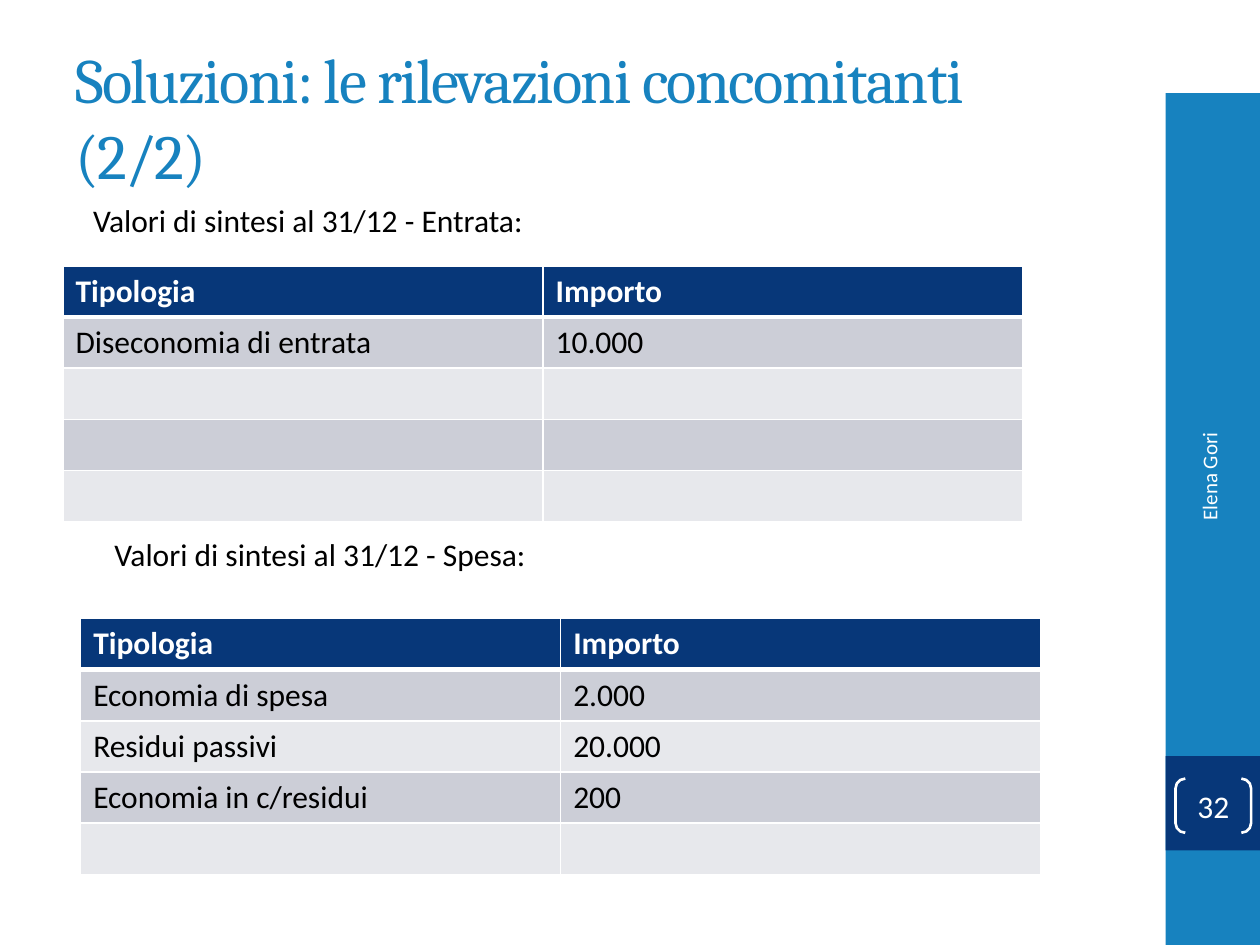
from lxml.etree import SubElement
from pptx import Presentation
from pptx.dml.color import RGBColor
from pptx.enum.shapes import MSO_SHAPE as Shape
from pptx.enum.text import MSO_ANCHOR as Anchor, PP_ALIGN as Align
from pptx.oxml.ns import qn
from pptx.util import Inches, Pt

# Content
TITLE = "Soluzioni: le rilevazioni concomitanti (2/2)"
AUTHOR = "Elena Gori"
PAGE = "32"
HEADER = ("Tipologia", "Importo")
BLANK_ROW = ("", "")
SECTIONS = [
    {
        "caption": "Valori di sintesi al 31/12 - Entrata:",
        "caption_at": (0.64, 1.55),
        "table_at": (0.5, 2.11),
        "rows": [HEADER, ("Diseconomia di entrata", "10.000")] + [BLANK_ROW] * 3,
    },
    {
        "caption": "Valori di sintesi al 31/12 - Spesa:",
        "caption_at": (0.81, 4.2),
        "table_at": (0.64, 4.91),
        "rows": [
            HEADER,
            ("Economia di spesa", "2.000"),
            ("Residui passivi", "20.000"),
            ("Economia in c/residui", "200"),
            BLANK_ROW,
        ],
    },
]

BLUE, NAVY, WHITE, BLACK = "1782BF", "073779", "FFFFFF", "000000"
BANDS = ("CCCED7", "E7E8EC")
COLUMN_WIDTH, TABLE_HEIGHT = 3.81, 2.03


def color(value):
    return RGBColor.from_string(value)


def write(frame, text, size=18, font="Calibri", ink=BLACK, bold=False,
          align=Align.LEFT, spacing=None):
    paragraph = frame.paragraphs[0]
    paragraph.alignment = align
    run = paragraph.add_run()
    run.text = text
    run.font.size = Pt(size)
    run.font.name = font
    run.font.bold = bold
    run.font.color.rgb = color(ink)
    if spacing is not None:
        run.font._element.set("spc", str(round(spacing * 100)))


def add_box(slide, at, text, anchor=Anchor.TOP, rotation=0, **style):
    box = slide.shapes.add_textbox(*map(Inches, at))
    box.rotation = rotation
    box.text_frame.word_wrap = True
    box.text_frame.vertical_anchor = anchor
    write(box.text_frame, text, **style)


def add_band(slide, at, fill):
    band = slide.shapes.add_shape(Shape.RECTANGLE, *map(Inches, at))
    band.shadow.inherit = False
    band.fill.solid()
    band.fill.fore_color.rgb = color(fill)
    band.line.fill.background()


def add_borders(cell, **widths):
    properties = cell._tc.get_or_add_tcPr()
    for side in "LRTB":
        line = SubElement(properties, qn(f"a:ln{side}"),
                          w=str(Pt(widths.get(side, 1))))
        fill = SubElement(line, qn("a:solidFill"))
        SubElement(fill, qn("a:srgbClr"), val=WHITE)


def add_grid(slide, at, rows):
    size = (COLUMN_WIDTH * len(HEADER), TABLE_HEIGHT)
    table = slide.shapes.add_table(
        len(rows), len(HEADER), *map(Inches, at + size)).table
    for r, row in enumerate(rows):
        is_header = r == 0
        for c, text in enumerate(row):
            cell = table.cell(r, c)
            # The rule under the header is thicker than the other borders
            add_borders(cell, B=3 if is_header else 1, T=3 if r == 1 else 1)
            cell.fill.solid()
            cell.fill.fore_color.rgb = color(
                NAVY if is_header else BANDS[(r - 1) % 2])
            if text:
                write(cell.text_frame, text, bold=is_header,
                      ink=WHITE if is_header else BLACK)


def add_page_number(slide):
    bracket = slide.shapes.add_shape(
        Shape.DOUBLE_BRACKET, *map(Inches, (9.33, 6.18, 0.6, 0.43)))
    bracket.shadow.inherit = False
    bracket.adjustments[0] = 0.18
    bracket.fill.background()
    bracket.line.color.rgb = color(WHITE)
    bracket.line.width = Pt(1.5)
    frame = bracket.text_frame
    frame.margin_left = frame.margin_right = 0
    frame.margin_top = frame.margin_bottom = 0
    frame.vertical_anchor = Anchor.MIDDLE
    write(frame, PAGE, ink=WHITE, align=Align.CENTER)


def main():
    deck = Presentation()
    deck.slide_width, deck.slide_height = Inches(10), Inches(7.5)
    slide = deck.slides.add_slide(deck.slide_layouts[6])

    # Side band with author and page number
    add_band(slide, (9.25, 0.74, 0.75, 6.76), BLUE)
    add_band(slide, (9.25, 6, 0.75, 0.75), NAVY)
    add_box(slide, (8.3, 4.43, 2.59, 0.4), AUTHOR, anchor=Anchor.MIDDLE,
            rotation=270, size=12, ink=WHITE, align=Align.RIGHT)
    add_page_number(slide)

    # Title
    add_box(slide, (0.5, 0.3, 8.33, 1.25), TITLE, anchor=Anchor.MIDDLE,
            size=36, font="Cambria", ink=BLUE, spacing=-1)

    # Captioned tables
    for section in SECTIONS:
        add_box(slide, section["caption_at"] + (3.67, 0.4), section["caption"])
        add_grid(slide, section["table_at"], section["rows"])

    deck.save("out.pptx")


if __name__ == "__main__":
    main()
